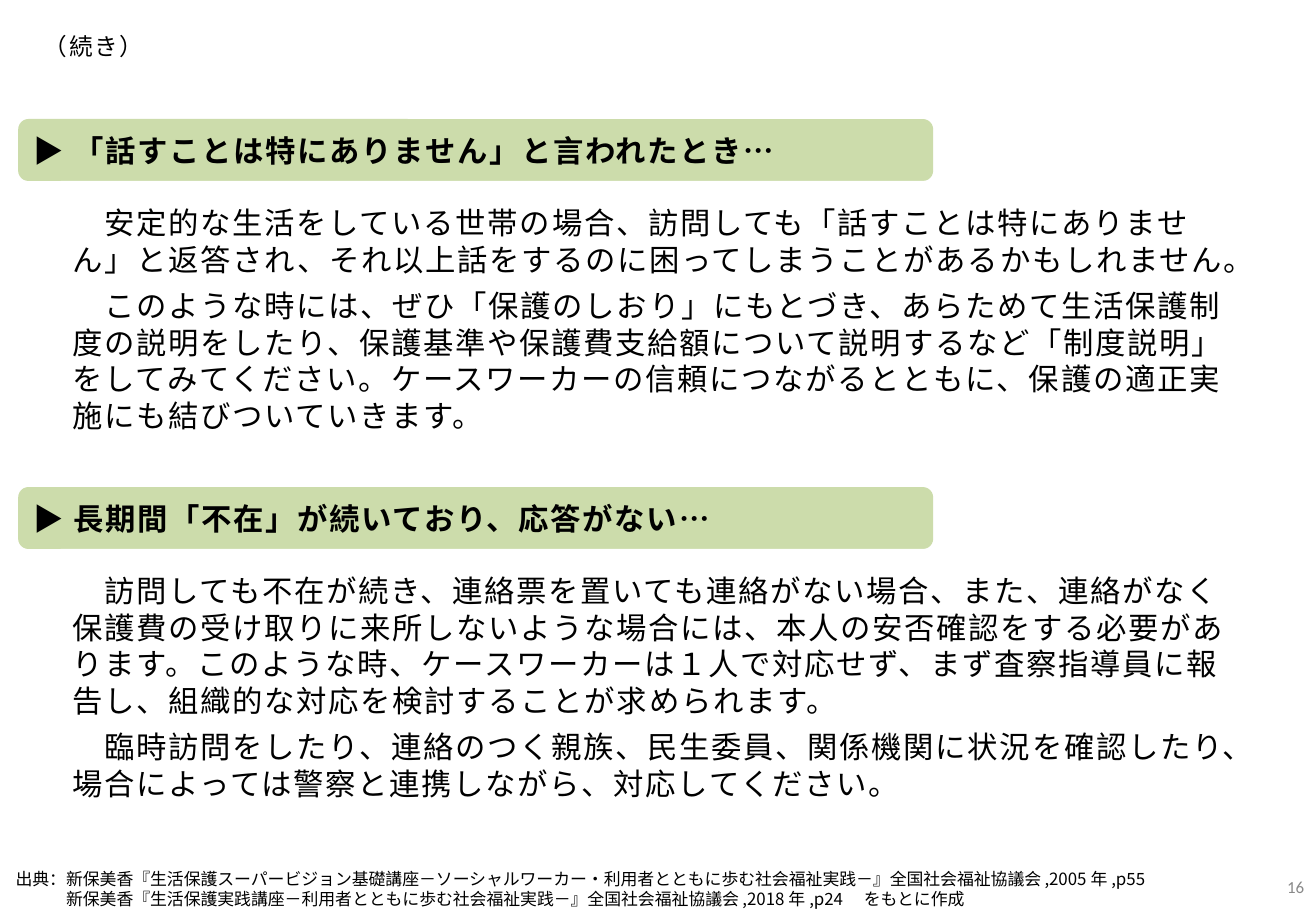
import dataclasses

import pptx
import pptx.dml.color
import pptx.enum.shapes
import pptx.enum.text
import pptx.oxml.ns
import pptx.util
from lxml import etree

Inches = pptx.util.Inches
Pt = pptx.util.Pt
qn = pptx.oxml.ns.qn
RGB = pptx.dml.color.RGBColor.from_string
Anchor = pptx.enum.text.MSO_ANCHOR
Align = pptx.enum.text.PP_ALIGN
ShapeType = pptx.enum.shapes.MSO_SHAPE


@dataclasses.dataclass(frozen=True)
class Theme:
    font: str = "Noto Sans CJK JP"
    number_font: str = "Calibri"
    ink: str = "000000"
    paper: str = "FFFFFF"
    band: str = "9BBB59"
    band_opacity: int = 50
    number: str = "898989"
    title_size: int = 14
    body_size: int = 18
    small_size: int = 10
    tracking: int = 1
    paragraph_gap: int = 6


THEME = Theme()

CONTINUED = "（続き）"
PAGE_NUMBER = "16"
SECTIONS = [
    (
        "▶ 「話すことは特にありません」と言われたとき…",
        [
            "　安定的な生活をしている世帯の場合、訪問しても「話すことは特にありません」と返答され、"
            "それ以上話をするのに困ってしまうことがあるかもしれません。",
            "　このような時には、ぜひ「保護のしおり」にもとづき、あらためて生活保護制度の説明をしたり、"
            "保護基準や保護費支給額について説明するなど「制度説明」をしてみてください。"
            "ケースワーカーの信頼につながるとともに、保護の適正実施にも結びついていきます。",
        ],
    ),
    (
        "▶ 長期間「不在」が続いており、応答がない…",
        [
            "　訪問しても不在が続き、連絡票を置いても連絡がない場合、また、連絡がなく保護費の受け取りに"
            "来所しないような場合には、本人の安否確認をする必要があります。このような時、ケースワーカーは"
            "１人で対応せず、まず査察指導員に報告し、組織的な対応を検討することが求められます。",
            "　臨時訪問をしたり、連絡のつく親族、民生委員、関係機関に状況を確認したり、"
            "場合によっては警察と連携しながら、対応してください。",
        ],
    ),
]
SOURCES = [
    "出典：新保美香『生活保護スーパービジョン基礎講座－ソーシャルワーカー・利用者とともに歩む"
    "社会福祉実践－』全国社会福祉協議会,2005年,p55",
    "　　　新保美香『生活保護実践講座－利用者とともに歩む社会福祉実践－』"
    "全国社会福祉協議会,2018年,p24　をもとに作成",
]


def write(shape, lines, size, color=THEME.ink, font=THEME.font, bold=False,
          tracking=0, gap=0, align=Align.LEFT, anchor=Anchor.MIDDLE, inset=0.05):
    """Fill a shape with evenly formatted paragraphs."""
    frame = shape.text_frame
    frame.word_wrap = True
    frame.auto_size = pptx.enum.text.MSO_AUTO_SIZE.NONE
    frame.vertical_anchor = anchor
    frame.margin_left = frame.margin_right = Inches(0.1)
    frame.margin_top = frame.margin_bottom = Inches(inset)
    for index, line in enumerate(lines):
        paragraph = frame.paragraphs[0] if index == 0 else frame.add_paragraph()
        paragraph.text = line
        paragraph.alignment = align
        paragraph.space_before = Pt(gap if index else 0)
        paragraph.font.size = Pt(size)
        paragraph.font.bold = bold
        paragraph.font.color.rgb = RGB(color)
        paragraph.font.name = font
        # East Asian typeface and letter spacing
        properties = paragraph._p.pPr.find(qn("a:defRPr"))
        properties.set("spc", str(tracking * 100))
        etree.SubElement(properties, qn("a:ea")).set("typeface", font)


def add_panel(slide, kind, left, top, width, height, color):
    panel = slide.shapes.add_shape(
        kind, Inches(left), Inches(top), Inches(width), Inches(height))
    panel.shadow.inherit = False
    panel.fill.solid()
    panel.fill.fore_color.rgb = RGB(color)
    panel.line.fill.background()
    return panel


def add_section(slide, top, heading, paragraphs):
    # Translucent heading band
    band = add_panel(slide, ShapeType.ROUNDED_RECTANGLE, 0.15, top, 7.53, 0.51, THEME.band)
    band_color = band._element.spPr.find(qn("a:solidFill")).find(qn("a:srgbClr"))
    etree.SubElement(band_color, qn("a:alpha")).set("val", str(THEME.band_opacity * 1000))
    write(band, [heading], THEME.body_size, bold=True, tracking=THEME.tracking)

    # Explanation below the band
    explanation = add_panel(slide, ShapeType.RECTANGLE, 0.5, top + 0.51, 9.84, 2.27, THEME.paper)
    write(explanation, paragraphs, THEME.body_size,
          tracking=THEME.tracking, gap=THEME.paragraph_gap)


def add_label(slide, left, top, width, height, lines, **style):
    label = slide.shapes.add_textbox(
        Inches(left), Inches(top), Inches(width), Inches(height))
    write(label, lines, THEME.small_size, **style)


def add_title(slide, text):
    title = slide.shapes.title
    title.left, title.top = Inches(0.26), Inches(0.26)
    title.width, title.height = Inches(1.1), Inches(0.24)
    write(title, [text], THEME.title_size, tracking=THEME.tracking,
          anchor=Anchor.TOP, inset=0)


def main():
    deck = pptx.Presentation()
    deck.slide_width, deck.slide_height = Inches(10.83), Inches(7.5)
    slide = deck.slides.add_slide(deck.slide_layouts[5])

    add_title(slide, CONTINUED)

    # Two sections at an equal pitch
    for index, (heading, paragraphs) in enumerate(SECTIONS):
        add_section(slide, 0.98 + index * 3.03, heading, paragraphs)

    # Sources and page number
    add_label(slide, 0.03, 7.15, 10.08, 0.31, SOURCES, anchor=Anchor.TOP, inset=0)
    add_label(slide, 10.42, 7.1, 0.41, 0.4, [PAGE_NUMBER], color=THEME.number,
              font=THEME.number_font, align=Align.RIGHT)

    deck.save("out.pptx")


if __name__ == "__main__":
    main()
